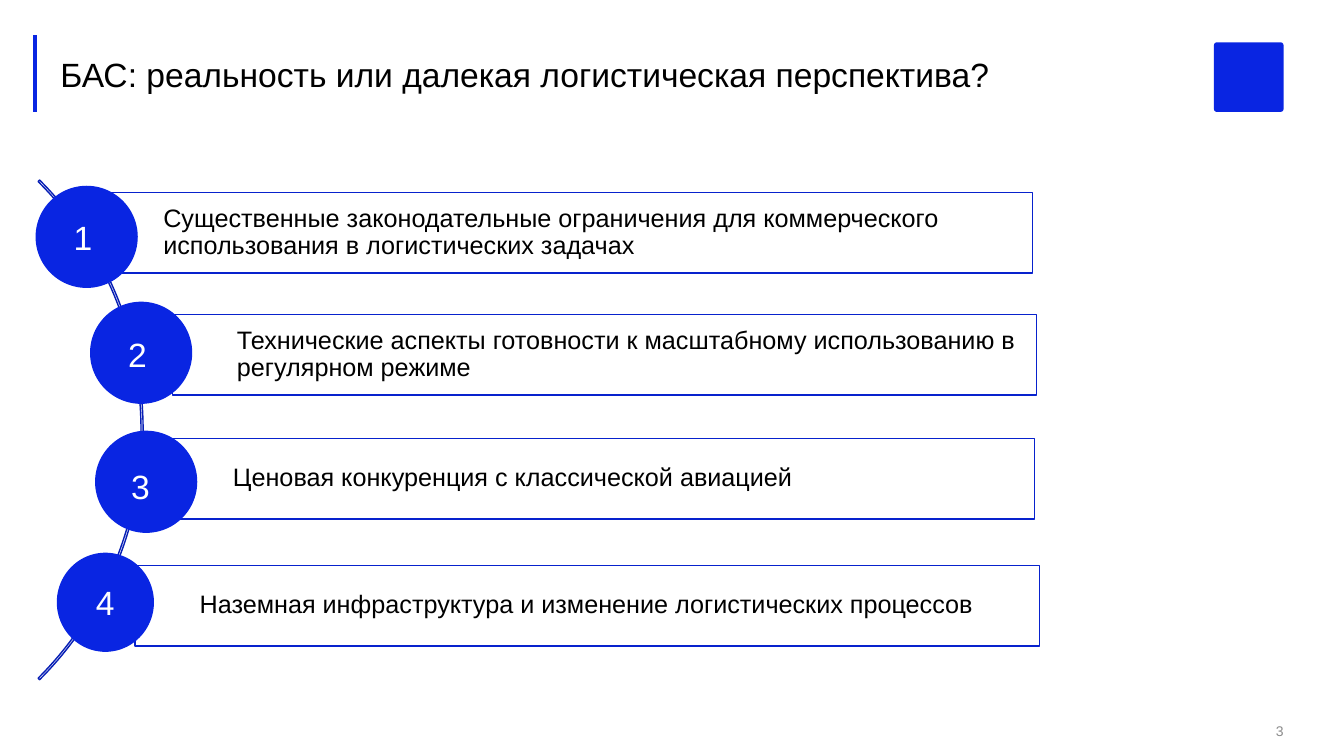
from dataclasses import dataclass

from lxml.etree import SubElement
from pptx import Presentation
from pptx.dml.color import RGBColor
from pptx.enum.shapes import MSO_CONNECTOR, MSO_SHAPE
from pptx.enum.text import MSO_ANCHOR, PP_ALIGN
from pptx.oxml.ns import qn
from pptx.shapes.autoshape import Shape
from pptx.slide import Slide
from pptx.text.text import TextFrame
from pptx.util import Inches, Pt

COLOURS = {
    "blue": "0925E2",
    "arc": "071EB5",
    "frame": "0822CD",
    "white": "FFFFFF",
    "black": "000000",
    "grey": "8C8C8C",
}
FONT = "Arial"
BAR_HEIGHT = 0.8


@dataclass
class Challenge:
    text: str
    bar: tuple[float, float, float]  # left, top, width
    circle: tuple[float, float, float, float]  # left, top, width, height
    number: tuple[float, float]  # left, top


CHALLENGES = [
    Challenge("Существенные законодательные ограничения для коммерческого "
              "использования в логистических задачах",
              (0.98, 1.91, 9.26), (0.36, 1.85, 1, 1), (0.73, 2.15)),
    Challenge("Технические аспекты готовности к масштабному использованию "
              "в регулярном режиме",
              (1.71, 3.12, 8.57), (0.9, 3, 1, 1), (1.27, 3.31)),
    Challenge("Ценовая конкуренция с классической авиацией",
              (1.67, 4.35, 8.59), (0.95, 4.28, 1, 1), (1.3, 4.62)),
    Challenge("Наземная инфраструктура и изменение логистических процессов",
              (1.34, 5.61, 8.97), (0.57, 5.49, 0.95, 0.97), (0.95, 5.77)),
]


def colour(name: str) -> RGBColor:
    return RGBColor.from_string(COLOURS[name])


def write(frame: TextFrame, text: str, size: float, text_colour: str,
          align: PP_ALIGN = PP_ALIGN.LEFT, anchor: MSO_ANCHOR = MSO_ANCHOR.MIDDLE,
          insets: tuple[float, float, float, float] = (0, 0, 0, 0),
          spacing: float = 1.0) -> None:
    """Fill a frame with one formatted run; insets are left, top, right, bottom."""
    frame.word_wrap = True
    frame.vertical_anchor = anchor
    (frame.margin_left, frame.margin_top,
     frame.margin_right, frame.margin_bottom) = map(Inches, insets)
    para = frame.paragraphs[0]
    para.alignment = align
    para.line_spacing = spacing
    span = para.add_run()
    span.text = text
    span.font.name = FONT
    span.font.size = Pt(size)
    span.font.bold = False
    span.font.color.rgb = colour(text_colour)


def add_box(page: Slide, kind: MSO_SHAPE, place: tuple[float, float, float, float],
            fill: str | None, line: str) -> Shape:
    box = page.shapes.add_shape(kind, *map(Inches, place))
    box.shadow.inherit = False
    if fill:
        box.fill.solid()
        box.fill.fore_color.rgb = colour(fill)
    else:
        box.fill.background()
    box.line.color.rgb = colour(line)
    box.line.width = Pt(1)
    return box


def add_label(page: Slide, place: tuple[float, float, float, float], text: str,
              size: float, text_colour: str, align: PP_ALIGN, anchor: MSO_ANCHOR) -> None:
    box = page.shapes.add_textbox(*map(Inches, place))
    write(box.text_frame, text, size, text_colour, align, anchor)


def add_header(page: Slide) -> None:
    emblem = add_box(page, MSO_SHAPE.ROUNDED_RECTANGLE, (12.04, 0.42, 0.69, 0.69),
                     "blue", "blue")
    emblem.adjustments[0] = 0.04
    emblem.line.fill.background()

    accent = page.shapes.add_connector(
        MSO_CONNECTOR.STRAIGHT, Inches(0.35), Inches(1.11), Inches(0.35), Inches(0.35))
    accent.line.color.rgb = colour("blue")
    accent.line.width = Pt(3)
    SubElement(accent._element.spPr, qn("a:effectLst"))

    title = page.shapes.title
    title.left, title.top, title.width, title.height = map(Inches, (0.6, 0.53, 11.1, 0.4))
    write(title.text_frame, "БАС: реальность или далекая логистическая перспектива?",
          24, "black")


def add_challenge(page: Slide, number: int, challenge: Challenge) -> None:
    bar = add_box(page, MSO_SHAPE.RECTANGLE, (*challenge.bar, BAR_HEIGHT), "white", "frame")
    write(bar.text_frame, challenge.text, 18, "black",
          insets=(0.64, 0.05, 0.05, 0.05), spacing=0.9)
    add_box(page, MSO_SHAPE.OVAL, challenge.circle, "blue", "blue")
    add_label(page, (*challenge.number, 0.41, 0.39), str(number), 24, "white",
              PP_ALIGN.LEFT, MSO_ANCHOR.TOP)


def main() -> None:
    deck = Presentation()
    deck.slide_width, deck.slide_height = Inches(13.33), Inches(7.5)
    page = deck.slides.add_slide(deck.slide_layouts[5])
    add_header(page)

    arc = add_box(page, MSO_SHAPE.BLOCK_ARC, (-5.59, 0.76, 7.01, 7.01), None, "arc")
    # Start angle, end angle and relative thickness
    for index, value in enumerate((189, 27, 0.003)):
        arc.adjustments[index] = value

    for number, challenge in enumerate(CHALLENGES, start=1):
        add_challenge(page, number, challenge)

    add_label(page, (12.56, 7.17, 0.17, 0.17), "3", 10, "grey",
              PP_ALIGN.RIGHT, MSO_ANCHOR.MIDDLE)
    deck.save("out.pptx")


if __name__ == "__main__":
    main()
